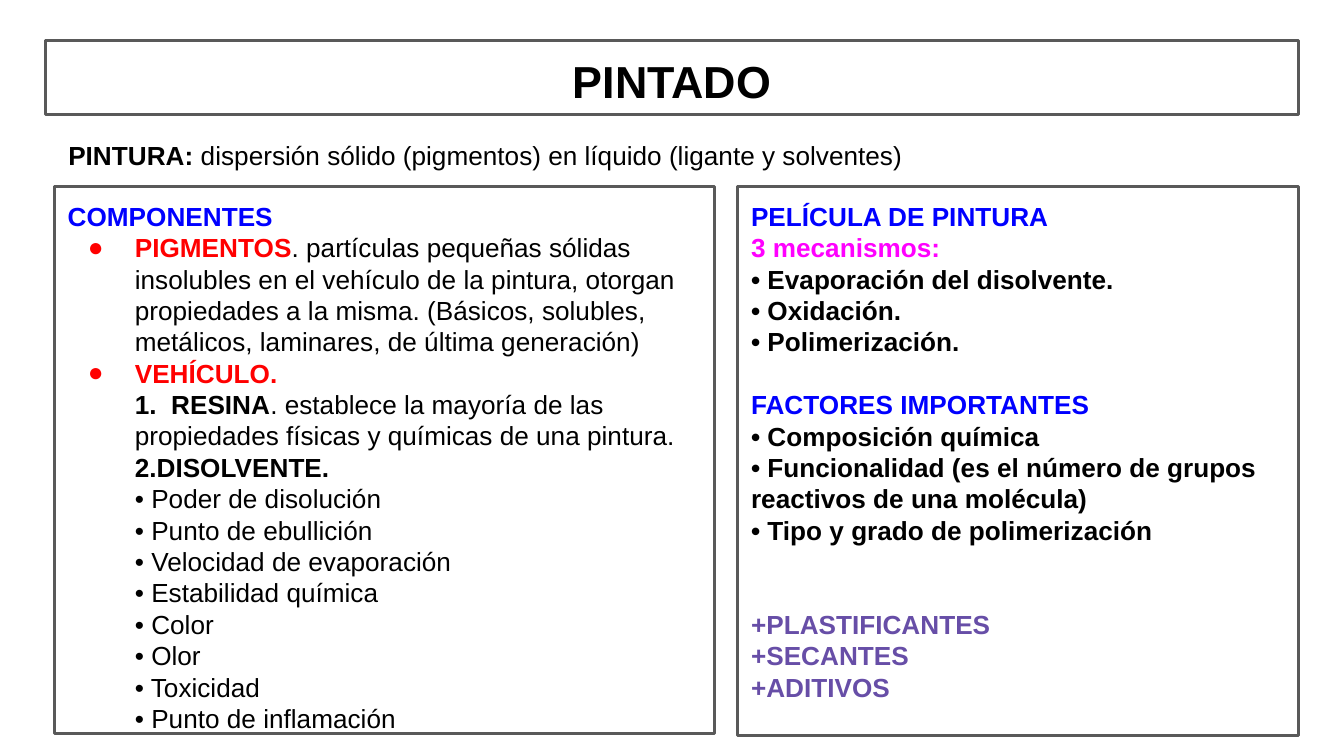
from lxml.etree import SubElement
from pptx import Presentation
from pptx.dml.color import RGBColor
from pptx.enum.shapes import MSO_SHAPE
from pptx.enum.text import MSO_ANCHOR, PP_ALIGN
from pptx.oxml.ns import qn
from pptx.util import Inches, Pt

WIDTH = Inches(10)
HEIGHT = WIDTH * 9 // 16
COLUMN = WIDTH // 100
BLACK, BLUE, RED, MAGENTA, PURPLE = "000000", "0000FF", "FF0000", "FF00FF", "674EA7"
BLANK_LINE = 16.8
SOLVENT_TRAITS = ["Poder de disolución", "Punto de ebullición", "Velocidad de evaporación",
                  "Estabilidad química", "Color", "Olor", "Toxicidad", "Punto de inflamación"]
MECHANISMS = ["Evaporación del disolvente.", "Oxidación.", "Polimerización."]
FACTORS = ["Composición química",
           "Funcionalidad (es el número de grupos reactivos de una molécula)",
           "Tipo y grado de polimerización"]
EXTRAS = ["+PLASTIFICANTES", "+SECANTES", "+ADITIVOS"]


def color(hex_code):
    """Turn a hex string into a colour."""
    return RGBColor.from_string(hex_code)


def area(*cells):
    """Turn left, top, width and height in square grid cells into lengths."""
    return [round(cell * COLUMN) for cell in cells]


def line(lead, tone=BLACK, rest="", bold=True, indent=0, bullet=False, gap=0):
    """Describe one paragraph: a lead run, a plain remainder and its layout."""
    return dict(lead=lead, tone=tone, rest=rest, bold=bold, indent=indent, bullet=bullet, gap=gap)


def write(frame, lines, size=14, align=PP_ALIGN.LEFT):
    """Fill a text frame with the described paragraphs."""
    frame.word_wrap = True
    frame.vertical_anchor = MSO_ANCHOR.TOP
    frame.margin_left = frame.margin_right = COLUMN
    frame.margin_top = frame.margin_bottom = COLUMN
    for index, item in enumerate(lines):
        paragraph = frame.add_paragraph() if index else frame.paragraphs[0]
        paragraph.alignment = align
        if item["gap"]:
            paragraph.space_before = Pt(item["gap"])
        properties = paragraph._p.get_or_add_pPr()
        properties.set("marL", str(Inches(item["indent"])))
        properties.set("indent", str(Inches(-0.35) if item["bullet"] else 0))
        if item["bullet"]:
            tint = SubElement(properties, qn("a:buClr"))
            SubElement(tint, qn("a:srgbClr"), val=item["tone"])
            SubElement(properties, qn("a:buFont"), typeface="Arial")
            SubElement(properties, qn("a:buChar"), char="●")
        runs = [(item["lead"], item["tone"], item["bold"]), (item["rest"], BLACK, False)]
        for words, tone, bold in runs:
            if words:
                run = paragraph.add_run()
                run.text = words
                run.font.name, run.font.size, run.font.bold = "Arial", Pt(size), bold
                run.font.color.rgb = color(tone)


def panel(slide, box, lines, **style):
    """Draw an outlined box holding text."""
    outline = slide.shapes.add_shape(MSO_SHAPE.RECTANGLE, *box)
    outline.shadow.inherit = False
    outline.fill.background()
    outline.line.color.rgb = color("595959")
    outline.line.width = Pt(1.5)
    write(outline.text_frame, lines, **style)


def title(slide, box):
    """Place the slide heading."""
    panel(slide, box, [line("PINTADO")], size=24, align=PP_ALIGN.CENTER)


def definition(slide, box):
    """Place the definition of paint."""
    rest = " dispersión sólido (pigmentos) en líquido (ligante y solventes)"
    write(slide.shapes.add_textbox(*box).text_frame, [line("PINTURA:", rest=rest)])


def components(slide, box):
    """Place the panel on pigments and vehicle."""
    pigments = (". partículas pequeñas sólidas insolubles en el vehículo de la pintura, otorgan "
                "propiedades a la misma. (Básicos, solubles, metálicos, laminares, "
                "de última generación)")
    resin = ". establece la mayoría de las propiedades físicas y químicas de una pintura."
    panel(slide, box, [
        line("COMPONENTES", BLUE),
        line("PIGMENTOS", RED, pigments, indent=0.5, bullet=True),
        line("VEHÍCULO.", RED, indent=0.5, bullet=True),
        line("1.  RESINA", rest=resin, indent=0.5),
        line("2.DISOLVENTE.", indent=0.5),
        *[line(f"• {trait}", bold=False, indent=0.5) for trait in SOLVENT_TRAITS],
    ])


def paint_film(slide, box):
    """Place the panel on film formation and its factors."""
    panel(slide, box, [
        line("PELÍCULA DE PINTURA", BLUE),
        line("3 mecanismos:", MAGENTA),
        *[line(f"• {mechanism}") for mechanism in MECHANISMS],
        line("FACTORES IMPORTANTES", BLUE, gap=BLANK_LINE),
        *[line(f"• {factor}") for factor in FACTORS],
        *[line(extra, PURPLE, gap=0 if index else 2 * BLANK_LINE)
          for index, extra in enumerate(EXTRAS)],
    ])


def main():
    """Build and save the slide."""
    deck = Presentation()
    deck.slide_width, deck.slide_height = WIDTH, HEIGHT
    slide = deck.slides.add_slide(deck.slide_layouts[6])
    title(slide, area(3.4, 3, 93.2, 5.5))
    definition(slide, area(4.1, 9.4, 91.9, 5.5))
    components(slide, area(4.05, 13.9, 49.1, 40.7))
    paint_film(slide, area(54.9, 13.9, 41.7, 40.8))
    deck.save("out.pptx")


if __name__ == "__main__":
    main()
